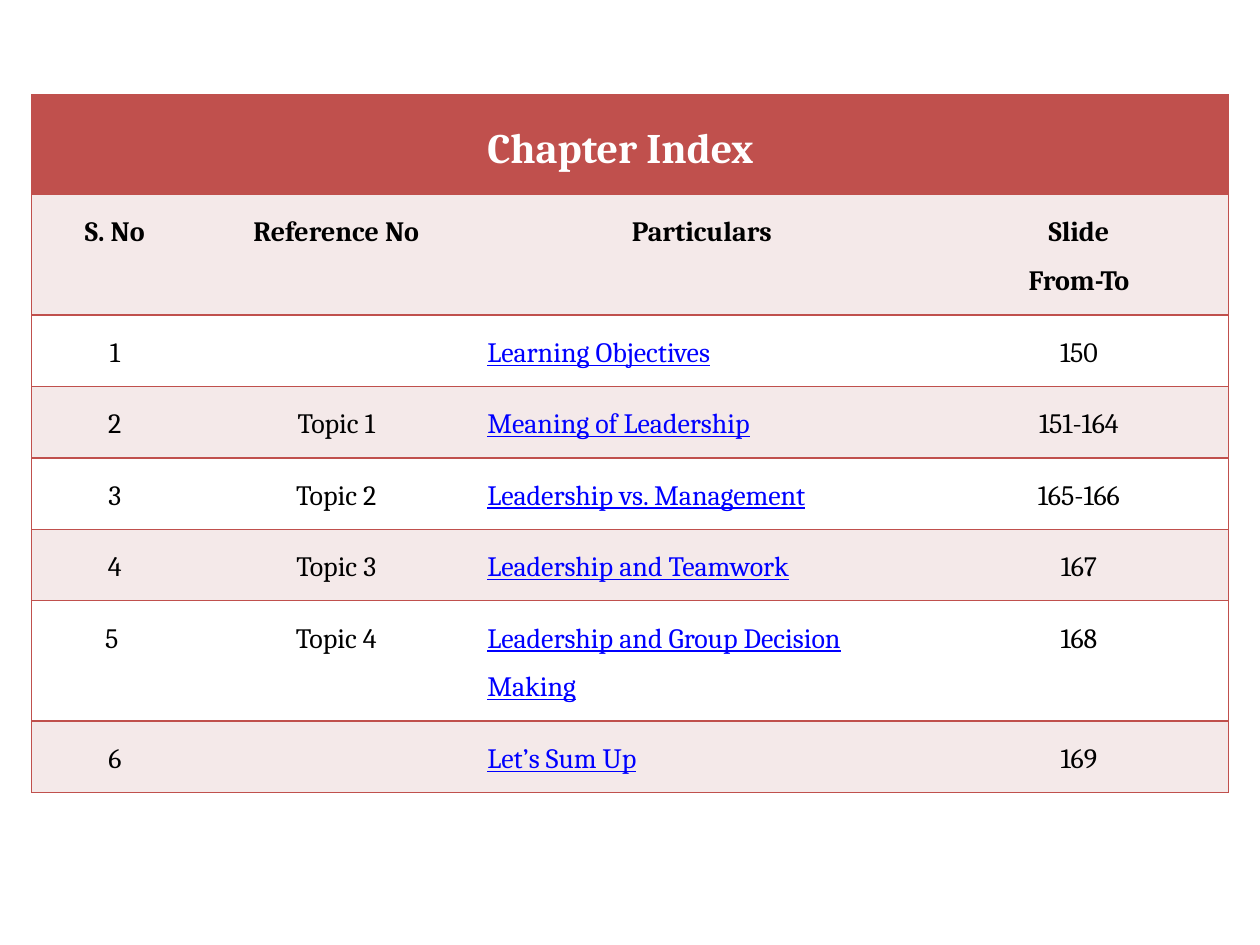
"""Build the chapter index slide: one bordered table with banded rows."""
from lxml.etree import SubElement
from pptx import Presentation
from pptx.dml.color import RGBColor
from pptx.enum.text import PP_ALIGN
from pptx.oxml import parse_xml
from pptx.oxml.ns import nsdecls, qn
from pptx.util import Cm, Pt

RED = RGBColor(0xC0, 0x50, 0x4D)
PINK = RGBColor(0xF4, 0xE9, 0xE9)
WHITE = RGBColor(0xFF, 0xFF, 0xFF)
BLACK = RGBColor(0, 0, 0)
BLUE = RGBColor(0, 0, 0xFF)

ROWS = [
    ("", "", "Chapter Index", ""),
    ("S. No", "Reference No", "Particulars", "Slide\nFrom-To"),
    ("1", "", "Learning Objectives", "150"),
    ("2", "Topic 1", "Meaning of Leadership", "151-164"),
    ("3", "Topic 2", "Leadership vs. Management", "165-166"),
    ("4", "Topic 3", "Leadership and Teamwork", "167"),
    ("5 ", "Topic 4", "Leadership and Group Decision Making", "168"),
    ("6", "", "Let’s Sum Up", "169"),
]
COLUMN_WIDTHS = [3.35, 5.58, 9.16, 6.04]
SINGLE_ROW, DOUBLE_ROW = 1.44, 2.43
ROW_HEIGHTS = [2.01, DOUBLE_ROW, *[SINGLE_ROW] * 4, DOUBLE_ROW, SINGLE_ROW]
TITLE_ROW, HEADING_ROW, PARTICULARS = 0, 1, 2
NO_GRID_STYLE = "{2D5ABB26-0587-4C30-8999-92F81FD0307C}"

FORMATS = {
    "title": ({"size": Pt(24), "bold": True}, WHITE, PP_ALIGN.JUSTIFY),
    "heading": ({"size": Pt(16), "bold": True}, BLACK, PP_ALIGN.CENTER),
    "entry": ({"size": Pt(16), "bold": False}, BLACK, PP_ALIGN.CENTER),
    "topic": ({"size": Pt(16), "bold": False, "underline": True}, BLUE, PP_ALIGN.LEFT),
}


def format_name(row, column):
    if row == TITLE_ROW:
        return "title"
    if row == HEADING_ROW:
        return "heading"
    return "topic" if column == PARTICULARS else "entry"


def write_text(cell, text, name):
    values, color, alignment = FORMATS[name]
    cell.text = text
    for paragraph in cell.text_frame.paragraphs:
        paragraph.alignment = alignment
        paragraph.line_spacing = 1.5
        for run in paragraph.runs:
            run.font.name = "Cambria"
            run.font.color.rgb = color
            for attribute, value in values.items():
                setattr(run.font, attribute, value)


def add_borders(cell, sides):
    properties = cell._tc.get_or_add_tcPr()
    for position, side in enumerate(sides):
        line = parse_xml(f'<a:ln{side} {nsdecls("a")} w="{Pt(1)}"/>')
        fill = SubElement(line, qn("a:solidFill"))
        SubElement(fill, qn("a:srgbClr"), val=str(RED))
        properties.insert(position, line)


def main():
    presentation = Presentation()
    presentation.slide_width, presentation.slide_height = Cm(25.4), Cm(19.05)
    slide = presentation.slides.add_slide(presentation.slide_layouts[6])
    shape = slide.shapes.add_table(
        len(ROWS), len(COLUMN_WIDTHS), Cm(0.64), Cm(1.91),
        Cm(sum(COLUMN_WIDTHS)), Cm(sum(ROW_HEIGHTS)))
    table = shape.table
    table.horz_banding = False
    table._tbl.tblPr.find(qn("a:tableStyleId")).text = NO_GRID_STYLE
    for column, width in zip(table.columns, COLUMN_WIDTHS):
        column.width = Cm(width)
    for row, height in zip(table.rows, ROW_HEIGHTS):
        row.height = Cm(height)

    outer_sides = {0: "LTB", len(COLUMN_WIDTHS) - 1: "RTB"}
    for row, texts in enumerate(ROWS):
        band = RED if row == TITLE_ROW else PINK if row % 2 else WHITE
        for column, text in enumerate(texts):
            cell = table.cell(row, column)
            write_text(cell, text, format_name(row, column))
            cell.fill.solid()
            cell.fill.fore_color.rgb = band
            add_borders(cell, outer_sides.get(column, "TB"))
    presentation.save("out.pptx")


if __name__ == "__main__":
    main()
